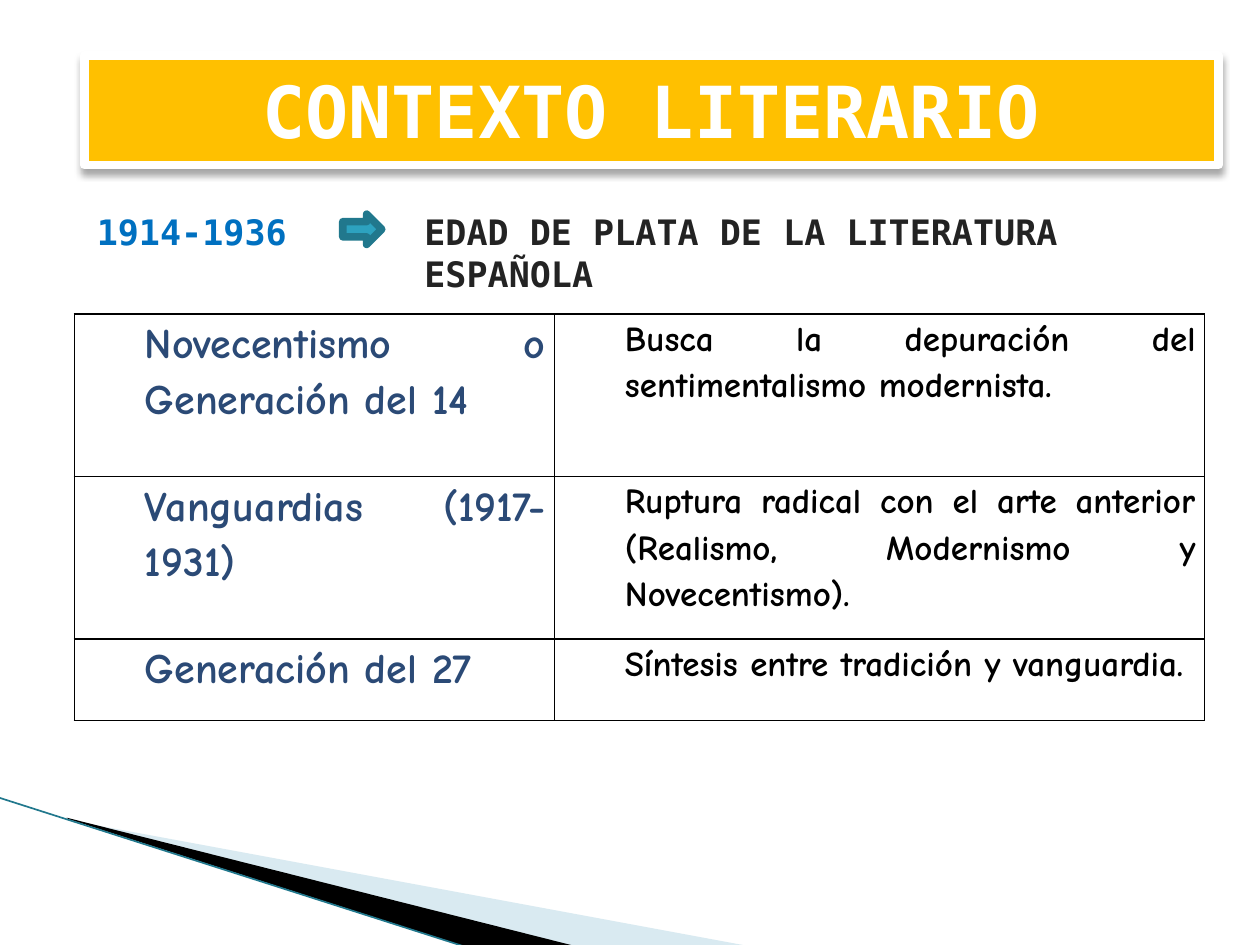
"""Build the literary context slide."""
from dataclasses import dataclass, field

from lxml import etree
from pptx import Presentation
from pptx import util as u
from pptx.dml.color import RGBColor
from pptx.enum import shapes, text
from pptx.oxml import parse_xml
from pptx.oxml.ns import nsdecls, qn

COLORS = {
    "gold": "FFC000", "white": "FFFFFF", "black": "000000", "teal": "2DA2BF",
    "dark teal": "21788D", "pale blue": "A0CBDC", "blue": "0070C0",
    "navy": "2B4A76", "charcoal": "232323",
}
MONO, COMIC = "DejaVu Sans Mono", "Comic Neue"
COLUMNS = (3.81, 5.16)
ROW_HEIGHTS = (1.29, 1.29, 0.65)
MOVEMENTS = (
    ("Novecentismo o Generación del 14",
     "Busca la depuración del sentimentalismo modernista."),
    ("Vanguardias (1917-1931)",
     "Ruptura radical con el arte anterior (Realismo, Modernismo y Novecentismo)."),
    ("Generación del 27", "Síntesis entre tradición y vanguardia."),
)
COLUMN_STYLES = ((24, "navy"), (20, "black"))


@dataclass
class Label:
    words: str
    size: float
    color: str
    font: str = MONO
    format: dict = field(default_factory=dict)


@dataclass
class Sliver:
    points: tuple
    color: str
    opacity: int = 100


SLIVERS = (
    Sliver(((0.55, 6.51), (5.95, 7.51), (4.56, 7.51), (0.55, 6.5)), "pale blue", 40),
    Sliver(((0.53, 6.49), (4.57, 7.51), (3.72, 7.52), (0.54, 6.5)), "black"),
)
HEADINGS = (
    (0.67, 2.04, Label("1914-1936", 20, "blue")),
    (3.27, 6.53, Label("EDAD DE PLATA DE LA LITERATURA ESPAÑOLA", 20, "charcoal")),
)


def rgb(name: str) -> RGBColor:
    """Return a named colour."""
    return RGBColor.from_string(COLORS[name])


def write(frame, label: Label) -> None:
    """Write one bold paragraph with its format."""
    paragraph = frame.paragraphs[0]
    for name, value in label.format.items():
        setattr(paragraph, name, value)
    run = paragraph.add_run()
    run.text = label.words
    for name, value in {"name": label.font, "size": u.Pt(label.size), "bold": True}.items():
        setattr(run.font, name, value)
    run.font.color.rgb = rgb(label.color)


def add_sliver(slide, sliver: Sliver) -> None:
    """Draw a filled outline in the lower corner."""
    points = [(u.Inches(x), u.Inches(y)) for x, y in sliver.points]
    builder = slide.shapes.build_freeform(*points[0])
    builder.add_line_segments(points[1:])
    shape = builder.convert_to_shape()
    shape.shadow.inherit = False
    shape.fill.solid()
    shape.fill.fore_color.rgb = rgb(sliver.color)
    shape.line.fill.background()
    if sliver.opacity < 100:
        color = shape.fill._xPr.find(qn("a:solidFill"))[0]
        etree.SubElement(color, qn("a:alpha"), val=str(sliver.opacity * 1000))


def add_edge(slide) -> None:
    """Draw the thin slanted line along the slivers."""
    edge = slide.shapes.add_connector(
        shapes.MSO_CONNECTOR.STRAIGHT,
        u.Inches(-0.01), u.Inches(6.33), u.Inches(3.71), u.Inches(7.52))
    edge.line.color.rgb = rgb("dark teal")
    edge.line.width = u.Pt(0.95)
    etree.SubElement(edge._element.spPr, qn("a:effectLst"))


def add_box(slide, kind, place: tuple, fill: str, line: str, width: float):
    """Add a preset shape with a solid fill and outline."""
    shape = slide.shapes.add_shape(kind, *map(u.Inches, place))
    shape.shadow.inherit = False
    shape.fill.solid()
    shape.fill.fore_color.rgb = rgb(fill)
    shape.line.color.rgb = rgb(line)
    shape.line.width = u.Pt(width)
    return shape


def add_title(slide) -> None:
    """Add the title banner with its drop shadow."""
    banner = add_box(slide, shapes.MSO_SHAPE.RECTANGLE, (0.67, 0.44, 9, 0.87),
                     "gold", "white", 5)
    effects = banner._element.spPr.find(qn("a:effectLst"))
    effects.append(parse_xml(
        f'<a:outerShdw {nsdecls("a")} blurRad="{u.Pt(4)}" dist="{u.Pt(3)}" dir="5400000" '
        f'rotWithShape="0"><a:srgbClr val="{COLORS["black"]}"><a:alpha val="35000"/>'
        '</a:srgbClr></a:outerShdw>'))
    banner.text_frame.vertical_anchor = text.MSO_ANCHOR.MIDDLE
    write(banner.text_frame, Label("CONTEXTO LITERARIO", 41, "white",
                                   format={"alignment": text.PP_ALIGN.CENTER}))


def add_heading(slide, left: float, width: float, label: Label) -> None:
    """Add a wrapped heading above the table."""
    box = slide.shapes.add_textbox(*map(u.Inches, (left, 1.62, width, 0.44)))
    box.text_frame.word_wrap = True
    write(box.text_frame, label)


def style_cell(cell) -> None:
    """Give a cell its margins, black borders and no fill."""
    margins = {"margin_left": 0.07, "margin_right": 0.07, "margin_top": 0, "margin_bottom": 0}
    for name, value in margins.items():
        setattr(cell, name, u.Inches(value))
    properties = cell._tc.get_or_add_tcPr()
    for side in "LRTB":
        properties.append(parse_xml(
            f'<a:ln{side} {nsdecls("a")} w="{u.Pt(1)}"><a:solidFill>'
            f'<a:srgbClr val="{COLORS["black"]}"/></a:solidFill></a:ln{side}>'))
    cell.fill.background()


def add_movements(slide) -> None:
    """Add the table of literary movements."""
    place = (0.59, 2.49, sum(COLUMNS), sum(ROW_HEIGHTS))
    table = slide.shapes.add_table(len(MOVEMENTS), len(COLUMNS), *map(u.Inches, place)).table
    table.first_row = table.horz_banding = False
    for column, width in zip(table.columns, COLUMNS):
        column.width = u.Inches(width)
    layout = {"alignment": text.PP_ALIGN.JUSTIFY, "line_spacing": 1.15}
    for row, height, entries in zip(table.rows, ROW_HEIGHTS, MOVEMENTS):
        row.height = u.Inches(height)
        for cell, words, (size, color) in zip(row.cells, entries, COLUMN_STYLES):
            style_cell(cell)
            write(cell.text_frame, Label(words, size, color, COMIC, layout))
            indent = cell.text_frame.paragraphs[0]._p.get_or_add_pPr()
            indent.set("marL", str(u.Inches(0.49)))
            indent.set("indent", "0")


def main() -> None:
    """Build and save the presentation."""
    presentation = Presentation()
    presentation.slide_width, presentation.slide_height = u.Inches(10), u.Inches(7.5)
    slide = presentation.slides.add_slide(presentation.slide_layouts[6])
    for sliver in SLIVERS:
        add_sliver(slide, sliver)
    add_edge(slide)
    add_title(slide)
    add_movements(slide)
    add_box(slide, shapes.MSO_SHAPE.RIGHT_ARROW, (2.72, 1.7, 0.31, 0.24),
            "teal", "dark teal", 4.33)
    for left, width, label in HEADINGS:
        add_heading(slide, left, width, label)
    presentation.save("out.pptx")


if __name__ == "__main__":
    main()
